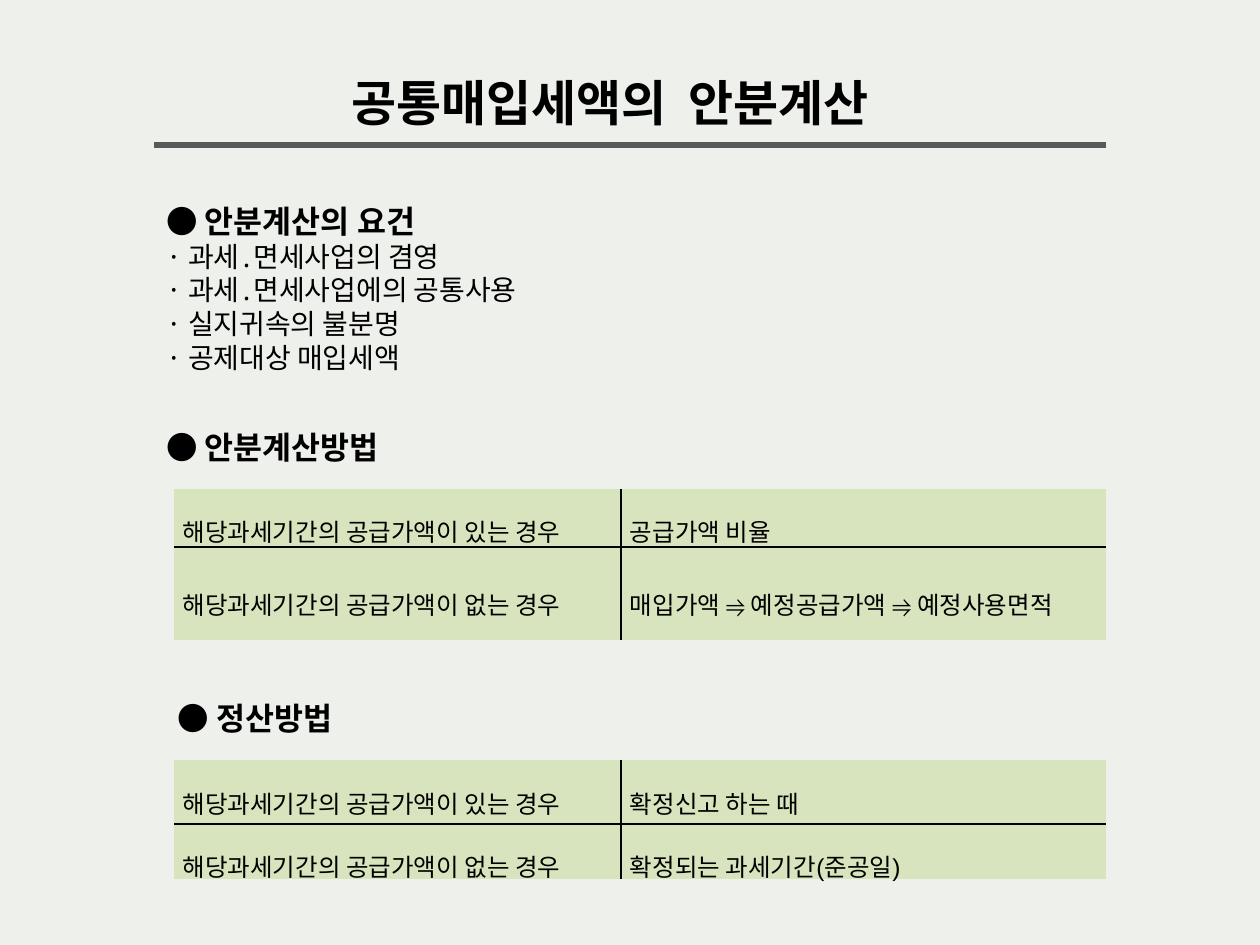
"""Build a slide on apportioning common input tax."""
from lxml.etree import SubElement
from pptx import Presentation
from pptx.dml.color import RGBColor
from pptx.enum.shapes import MSO_CONNECTOR
from pptx.enum.text import MSO_ANCHOR, MSO_AUTO_SIZE, PP_ALIGN
from pptx.oxml.ns import qn
from pptx.util import Inches, Pt

BLACK, GRAY, GREEN, PAPER = "000000", "595959", "D7E4BD", "EEF0EC"
LATIN, KOREAN = "Arial", "Noto Sans CJK KR"
TITLE = {"size": Pt(28), "name": LATIN, "bold": True}
HEADING = {"size": Pt(18), "name": KOREAN, "bold": True}
ITEM = {"size": Pt(16), "name": KOREAN, "bold": False}
CELL = {"size": Pt(14), "name": LATIN, "bold": False}
LEFT_PARAGRAPH = {"alignment": PP_ALIGN.LEFT, "space_before": Pt(0)}
TITLE_PARAGRAPH = {"alignment": PP_ALIGN.CENTER, "space_before": Pt(0)}
CELL_PARAGRAPH = {"alignment": PP_ALIGN.JUSTIFY, "line_spacing": 1.6}
CELL_BOX = {
    "vertical_anchor": MSO_ANCHOR.MIDDLE,
    "margin_left": Inches(0.07),
    "margin_right": Inches(0.07),
    "margin_top": Inches(0.02),
    "margin_bottom": Inches(0.02),
}


def color(value):
    return RGBColor.from_string(value)


def apply(target, values):
    for name, value in values.items():
        setattr(target, name, value)


class SlideBuilder:
    def __init__(self, presentation):
        self.slide = presentation.slides.add_slide(presentation.slide_layouts[1])
        background = self.slide.background.fill
        background.solid()
        background.fore_color.rgb = color(PAPER)

    def add_text(self, paragraph, text, font, layout):
        run = paragraph.add_run()
        run.text = text
        apply(run.font, font)
        run.font.color.rgb = color(BLACK)
        SubElement(run._r.get_or_add_rPr(), qn("a:ea"), typeface=KOREAN)
        apply(paragraph, layout)

    def place(self, shape, box):
        apply(shape, dict(zip(("left", "top", "width", "height"), map(Inches, box))))

    def title(self, text, box):
        shape = self.slide.shapes.title
        self.place(shape, box)
        frame = shape.text_frame
        apply(frame, {"auto_size": MSO_AUTO_SIZE.NONE, "vertical_anchor": MSO_ANCHOR.MIDDLE})
        self.add_text(frame.paragraphs[0], text, TITLE, TITLE_PARAGRAPH)

    def body(self, heading, items, box):
        shape = self.slide.placeholders[1]
        self.place(shape, box)
        frame = shape.text_frame
        frame.auto_size = MSO_AUTO_SIZE.NONE
        lines = [(heading, HEADING)] + [(f"· {item}", ITEM) for item in items]
        for index, (text, font) in enumerate(lines):
            paragraph = frame.add_paragraph() if index else frame.paragraphs[0]
            self.add_text(paragraph, text, font, LEFT_PARAGRAPH)
            properties = paragraph._p.get_or_add_pPr()
            properties.set("marL", "0")
            properties.set("indent", "0")
            SubElement(properties, qn("a:buNone"))

    def heading(self, text, box):
        frame = self.slide.shapes.add_textbox(*map(Inches, box)).text_frame
        frame.word_wrap = False
        self.add_text(frame.paragraphs[0], text, HEADING, LEFT_PARAGRAPH)

    def rule(self, left, right, top):
        points = map(Inches, (left, top, right, top))
        connector = self.slide.shapes.add_connector(MSO_CONNECTOR.STRAIGHT, *points)
        connector.line.color.rgb = color(GRAY)
        connector.line.width = Pt(3)
        SubElement(connector._element.spPr, qn("a:effectLst"))

    def border(self, cell, side, visible):
        properties = cell._tc.get_or_add_tcPr()
        line = SubElement(properties, qn(f"a:ln{side}"), w=str(Pt(1)))
        if visible:
            fill = SubElement(line, qn("a:solidFill"))
            SubElement(fill, qn("a:srgbClr"), val=BLACK)
        else:
            SubElement(line, qn("a:noFill"))

    def table(self, rows, left, top, widths, heights):
        box = map(Inches, (left, top, sum(widths), sum(heights)))
        table = self.slide.shapes.add_table(len(rows), len(widths), *box).table
        apply(table, {"first_row": False, "horz_banding": False})
        for column, width in zip(table.columns, widths):
            column.width = Inches(width)
        for row, height in zip(table.rows, heights):
            row.height = Inches(height)
        for row_index, texts in enumerate(rows):
            for column_index, text in enumerate(texts):
                cell = table.cell(row_index, column_index)
                apply(cell, CELL_BOX)
                self.add_text(cell.text_frame.paragraphs[0], text, CELL, CELL_PARAGRAPH)
                inner_sides = {
                    "L": column_index > 0,
                    "R": column_index < len(widths) - 1,
                    "T": row_index > 0,
                    "B": row_index < len(rows) - 1,
                }
                for side, visible in inner_sides.items():
                    self.border(cell, side, visible)
                cell.fill.solid()
                cell.fill.fore_color.rgb = color(GREEN)


def main():
    presentation = Presentation()
    apply(presentation, {"slide_width": Inches(10), "slide_height": Inches(7.5)})
    builder = SlideBuilder(presentation)
    builder.rule(1.22, 8.78, 1.15)
    builder.title("공통매입세액의  안분계산", (0.5, 0.52, 8.68, 0.57))
    requirements = [
        "과세․면세사업의 겸영",
        "과세․면세사업에의 공통사용",
        "실지귀속의 불분명",
        "공제대상 매입세액",
    ]
    builder.body("● 안분계산의 요건", requirements, (1.22, 1.55, 7.4, 1.48))

    cases = [f"해당과세기간의 공급가액이 {state} 경우" for state in ("있는", "없는")]
    methods = ["공급가액 비율", "매입가액 ⥤ 예정공급가액 ⥤ 예정사용면적"]
    settlements = ["확정신고 하는 때", "확정되는 과세기간(준공일)"]
    widths = (3.55, 3.85)
    builder.heading("● 안분계산방법", (1.22, 3.35, 2.06, 0.4))
    builder.table(list(zip(cases, methods)), 1.38, 3.88, widths, (0.46, 0.74))
    builder.heading("● 정산방법", (1.31, 5.5, 1.55, 0.4))
    builder.table(list(zip(cases, settlements)), 1.38, 6.03, widths, (0.51, 0.44))
    presentation.save("out.pptx")


if __name__ == "__main__":
    main()
